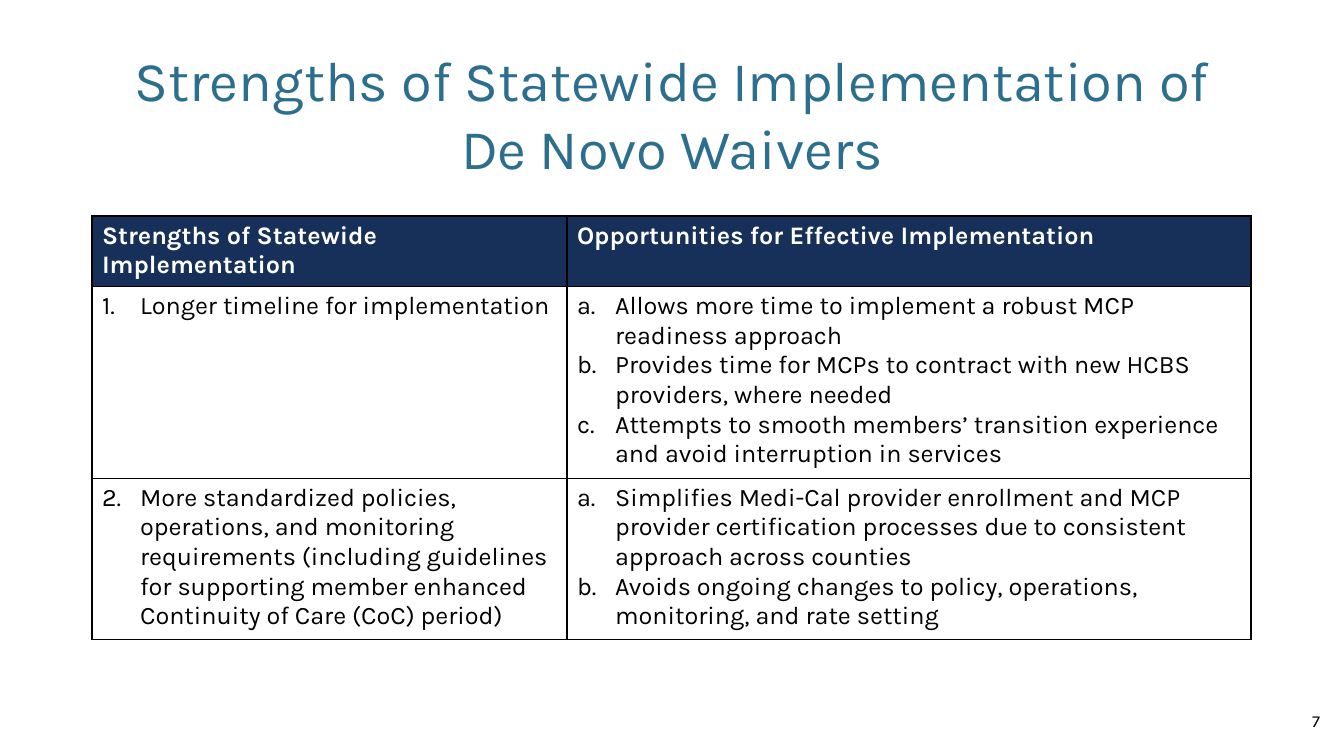
from dataclasses import dataclass

from lxml.etree import SubElement
from pptx import Presentation
from pptx.dml.color import RGBColor
from pptx.enum.text import MSO_ANCHOR, PP_ALIGN
from pptx.oxml.ns import qn
from pptx.util import Pt

TITLE = "Strengths of Statewide Implementation of De Novo Waivers"
PAGE_NUMBER = "7"
HEADINGS = ["Strengths of Statewide Implementation", "Opportunities for Effective Implementation"]
STRENGTHS = [
    (
        "Longer timeline for implementation",
        [
            "Allows more time to implement a robust MCP readiness approach",
            "Provides time for MCPs to contract with new HCBS providers, where needed",
            "Attempts to smooth members’ transition experience and avoid interruption in services",
        ],
    ),
    (
        "More standardized policies, operations, and monitoring requirements (including guidelines "
        "for supporting member enhanced Continuity of Care (CoC) period)",
        [
            "Simplifies Medi-Cal provider enrollment and MCP provider certification processes "
            "due to consistent approach across counties",
            "Avoids ongoing changes to policy, operations, monitoring, and rate setting",
        ],
    ),
]


@dataclass(frozen=True)
class Theme:
    font: str = "Karla"
    title: str = "2C6E8D"
    header: str = "173059"
    paper: str = "FFFFFF"
    ink: str = "000000"
    title_size: int = 40
    table_size: int = 18
    number_size: int = 12


THEME = Theme()
SLIDE_SIZE = (1344, 756)
TITLE_BOX = (92, 40, 1160, 146)
NUMBER_BOX = (1028, 701, 302, 40)
TABLE_ORIGIN = (92, 216)
COLUMN_WIDTHS = [475, 684]
ROW_HEIGHTS = [70, 187, 158]
HANGING = 38


def px(length):
    return round(length * 914400 / 100.8)


def write(frame, text, size=THEME.table_size, color=THEME.ink, bold=False,
          align=PP_ALIGN.LEFT, numbering=None, start=1):
    lines = [text] if isinstance(text, str) else text
    frame.word_wrap = True
    for index, line in enumerate(lines):
        paragraph = frame.add_paragraph() if index else frame.paragraphs[0]
        paragraph.alignment = align
        if numbering:
            properties = paragraph._p.get_or_add_pPr()
            properties.set("marL", str(px(HANGING)))
            properties.set("indent", str(-px(HANGING)))
            number = SubElement(properties, qn("a:buAutoNum"), type=numbering)
            if start > 1:
                number.set("startAt", str(start))
        run = paragraph.add_run()
        run.text = line
        run.font.name = THEME.font
        run.font.size = Pt(size)
        run.font.bold = bold
        run.font.color.rgb = RGBColor.from_string(color)


def add_label(slide, box, text, **text_format):
    frame = slide.shapes.add_textbox(*map(px, box)).text_frame
    frame.vertical_anchor = MSO_ANCHOR.MIDDLE
    write(frame, text, **text_format)


def style_cell(cell, color):
    properties = cell._tc.get_or_add_tcPr()
    for side in ("lnL", "lnR", "lnT", "lnB"):
        border = SubElement(properties, qn(f"a:{side}"), w=str(Pt(1)))
        ink = SubElement(border, qn("a:solidFill"))
        SubElement(ink, qn("a:srgbClr"), val=THEME.ink)
    cell.fill.solid()
    cell.fill.fore_color.rgb = RGBColor.from_string(color)


def add_strengths_table(slide):
    bounds = (*TABLE_ORIGIN, sum(COLUMN_WIDTHS), sum(ROW_HEIGHTS))
    table = slide.shapes.add_table(len(ROW_HEIGHTS), len(COLUMN_WIDTHS), *map(px, bounds)).table
    for column, width in zip(table.columns, COLUMN_WIDTHS):
        column.width = px(width)
    for row, height in zip(table.rows, ROW_HEIGHTS):
        row.height = px(height)
    for column, heading in enumerate(HEADINGS):
        cell = table.cell(0, column)
        style_cell(cell, THEME.header)
        write(cell.text_frame, heading, color=THEME.paper, bold=True)
    for row, (strength, opportunities) in enumerate(STRENGTHS, start=1):
        strength_cell, opportunity_cell = table.cell(row, 0), table.cell(row, 1)
        style_cell(strength_cell, THEME.paper)
        style_cell(opportunity_cell, THEME.paper)
        write(strength_cell.text_frame, strength, numbering="arabicPeriod", start=row)
        write(opportunity_cell.text_frame, opportunities, numbering="alphaLcPeriod")


def main():
    deck = Presentation()
    deck.slide_width, deck.slide_height = map(px, SLIDE_SIZE)
    slide = deck.slides.add_slide(deck.slide_layouts[6])
    slide.background.fill.solid()
    slide.background.fill.fore_color.rgb = RGBColor.from_string(THEME.paper)
    add_label(slide, NUMBER_BOX, PAGE_NUMBER, size=THEME.number_size, align=PP_ALIGN.RIGHT)
    add_label(slide, TITLE_BOX, TITLE, size=THEME.title_size, color=THEME.title, align=PP_ALIGN.CENTER)
    add_strengths_table(slide)
    deck.save("out.pptx")


if __name__ == "__main__":
    main()
